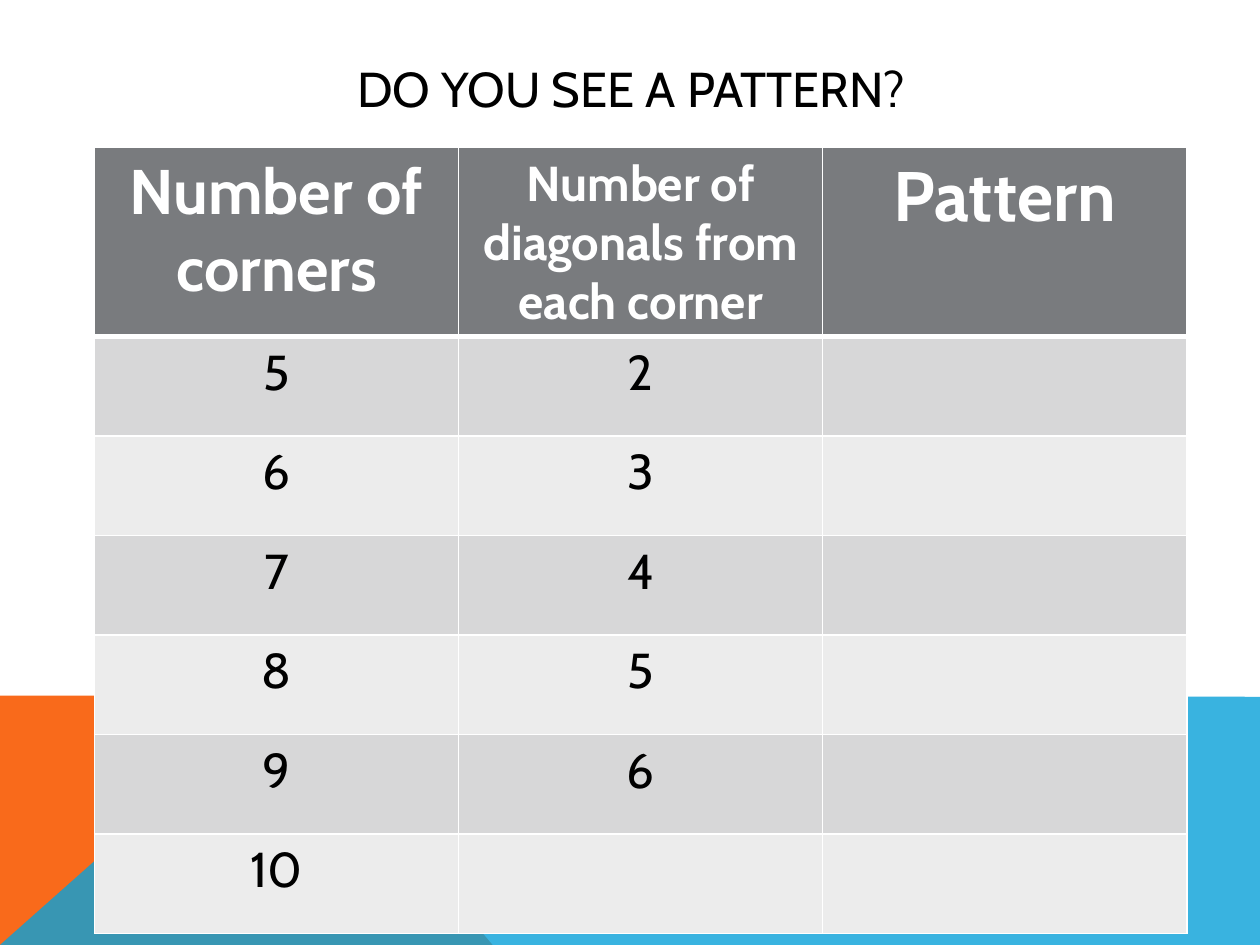
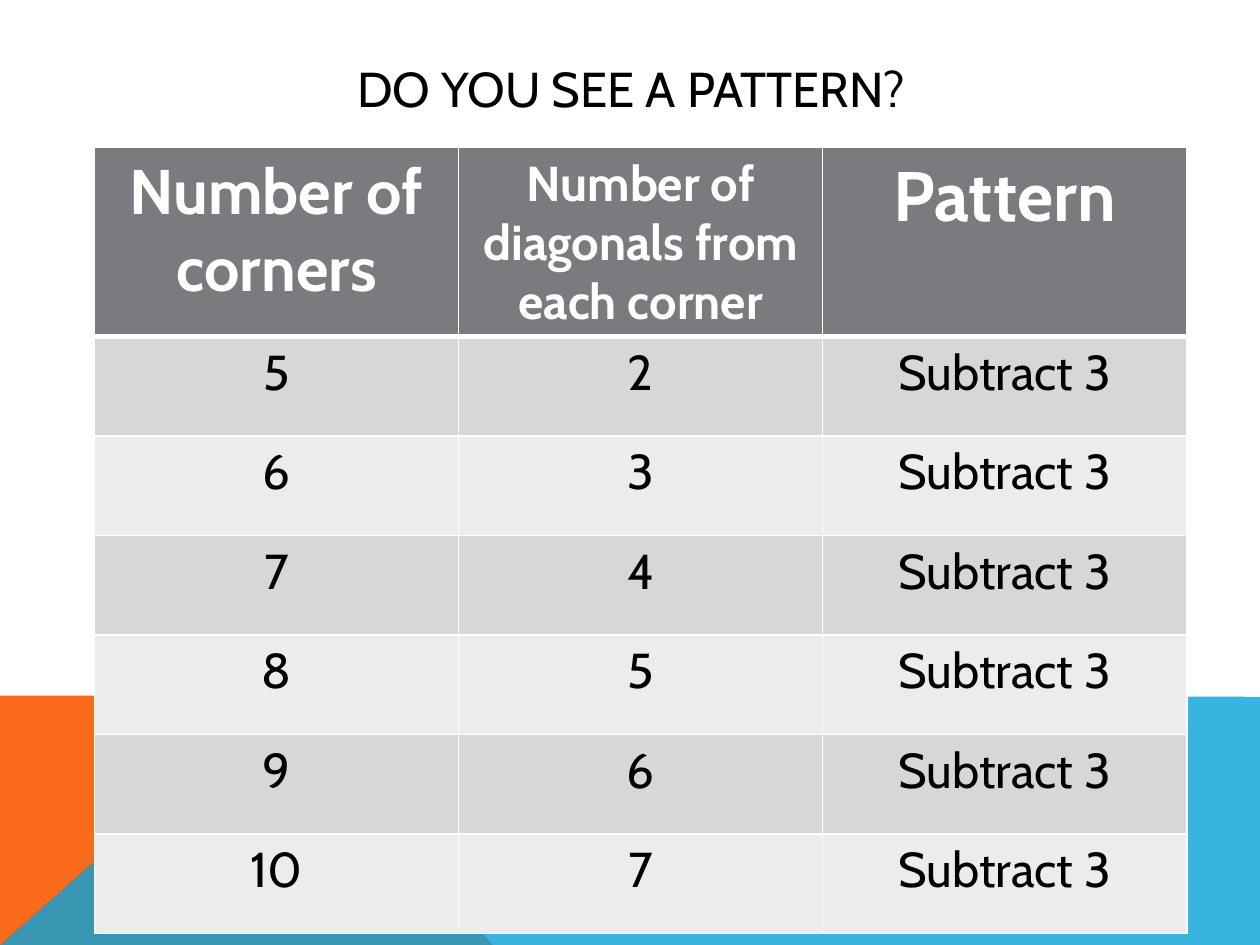
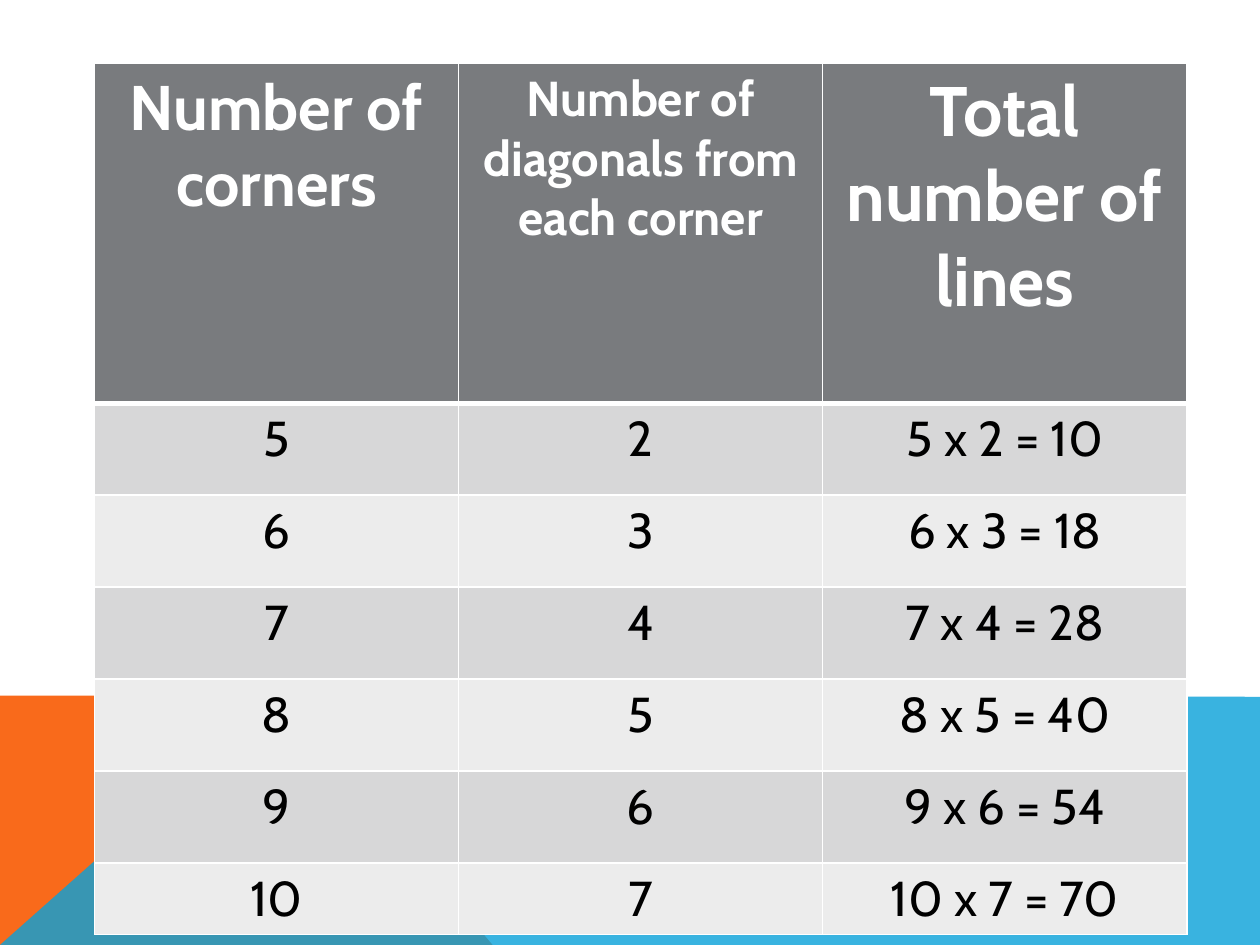
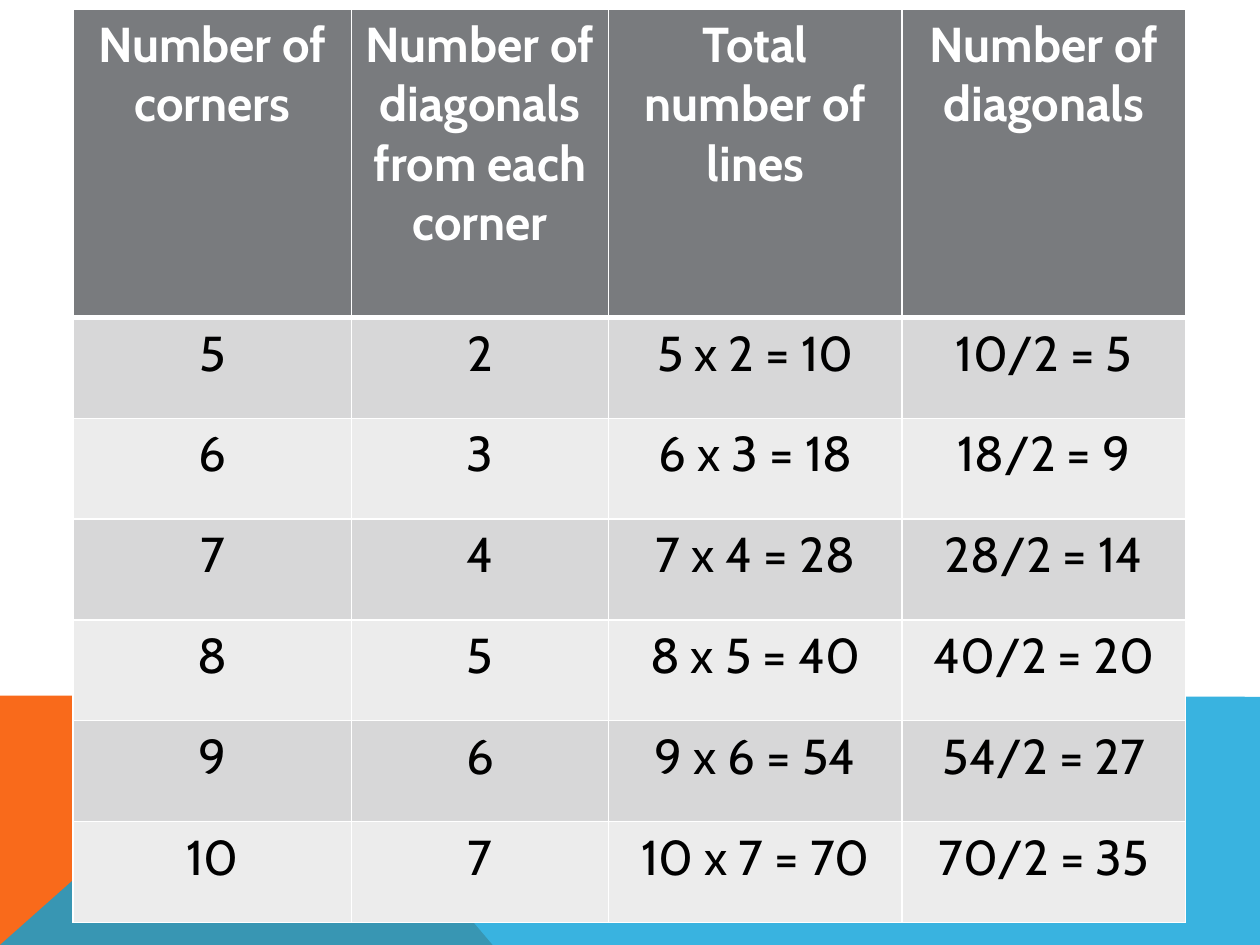
import pptx
import pptx.util
import pptx.dml.color
import pptx.enum.text
import pptx.oxml
import pptx.oxml.ns
from pptx.util import Inches

FONT = "Cabin"
BLACK, WHITE = "000000", "FFFFFF"
ORANGE, BLUE = "F96A1B", "08A1D9"
HEADER, ROW_FILLS = "797B7E", ("D7D7D8", "ECECEC")
CENTER = pptx.enum.text.PP_ALIGN.CENTER
TITLE = "DO YOU SEE A PATTERN?"


def rgb(color):
    return pptx.dml.color.RGBColor.from_string(color)


def style(p, size, color, bold=False):
    p.alignment = CENTER
    p.font.name = FONT
    p.font.size = pptx.util.Pt(size)
    p.font.color.rgb = rgb(color)
    p.font.bold = bold


bands = [
    (ORANGE, 100, [(0, 7.5), (0, 5.52), (2.23, 5.52), (3.91, 7.5)]),
    (BLUE, 80, [(0, 7.5), (2.23, 5.52), (10, 5.53), (10, 7.5)]),
]

corners = range(5, 11)
numbers = [str(n) for n in corners]
diagonals = [str(n - 3) for n in corners]
products = [f"{n} x {n - 3} = {n * (n - 3)}" for n in corners]
halves = [f"{n * (n - 3)}/2 = {n * (n - 3) // 2}" for n in corners]

corner_head = "Number of corners"
diagonal_head = "Number of diagonals from each corner"
lines_head = "Total number of lines"
pattern_heads = [corner_head, diagonal_head, "Pattern"]
wide_cols, wide_sizes = [2.89] * 3, [36, 28, 40]

slides = [
    (TITLE, 0.75, 1.17, wide_cols, [1.5] + [0.79] * 6, wide_sizes, pattern_heads,
     [numbers, diagonals[:-1] + [""], [""] * 6]),
    (TITLE, 0.75, 1.17, wide_cols, [1.5] + [0.79] * 6, wide_sizes, pattern_heads,
     [numbers, diagonals, ["Subtract 3"] * 6]),
    (None, 0.75, 0.5, wide_cols, [2.7] + [0.73] * 5 + [0.55], wide_sizes,
     [corner_head, diagonal_head, lines_head],
     [numbers, diagonals, products]),
    (None, 0.58, 0.07, [2.21, 2.04, 2.33, 2.25], [2.45] + [0.8] * 6, [28] * 4,
     [corner_head, diagonal_head, lines_head, "Number of diagonals"],
     [numbers, diagonals, products, halves]),
]

prs = pptx.Presentation()
prs.slide_width, prs.slide_height = Inches(10), Inches(7.5)

for title, left, top, widths, heights, sizes, heads, columns in slides:
    s = prs.slides.add_slide(prs.slide_layouts[6])
    s.background.fill.solid()
    s.background.fill.fore_color.rgb = rgb(WHITE)

    for color, opacity, points in bands:
        points = [(Inches(x), Inches(y)) for x, y in points]
        builder = s.shapes.build_freeform(*points[0])
        builder.add_line_segments(points[1:])
        sp = builder.convert_to_shape()
        sp.shadow.inherit = False
        sp.line.fill.background()
        sp.fill.solid()
        sp.fill.fore_color.rgb = rgb(color)
        if opacity < 100:
            clr = sp.fill._xPr.find(".//" + pptx.oxml.ns.qn("a:srgbClr"))
            clr.append(pptx.oxml.parse_xml(
                f'<a:alpha {pptx.oxml.ns.nsdecls("a")} val="{opacity * 1000}"/>'))

    if title:
        sp = s.shapes.add_textbox(Inches(0.9), Inches(0.4), Inches(8.22), Inches(0.6))
        tf = sp.text_frame
        tf.word_wrap = True
        tf.vertical_anchor = pptx.enum.text.MSO_ANCHOR.MIDDLE
        p = tf.paragraphs[0]
        p.text = title
        style(p, 28, BLACK)

    table = s.shapes.add_table(
        len(heights), len(widths), Inches(left), Inches(top),
        Inches(sum(widths)), Inches(sum(heights))).table
    for col, width in zip(table.columns, widths):
        col.width = Inches(width)
    for row, height in zip(table.rows, heights):
        row.height = Inches(height)

    for i in range(len(heights)):
        for j in range(len(widths)):
            cell = table.cell(i, j)
            p = cell.text_frame.paragraphs[0]
            if i == 0:
                p.text = heads[j]
                style(p, sizes[j], WHITE, True)
            else:
                p.text = columns[j][i - 1]
                style(p, 28, BLACK)
            tcPr = cell._tc.get_or_add_tcPr()
            for side in "LRTB":
                pt = 3 if (i, side) in ((0, "B"), (1, "T")) else 1
                tcPr.append(pptx.oxml.parse_xml(
                    f'<a:ln{side} {pptx.oxml.ns.nsdecls("a")} w="{pt * 12700}">'
                    f'<a:solidFill><a:srgbClr val="{WHITE}"/></a:solidFill></a:ln{side}>'))
            cell.fill.solid()
            cell.fill.fore_color.rgb = rgb(HEADER if i == 0 else ROW_FILLS[(i - 1) % 2])

prs.save("out.pptx")
